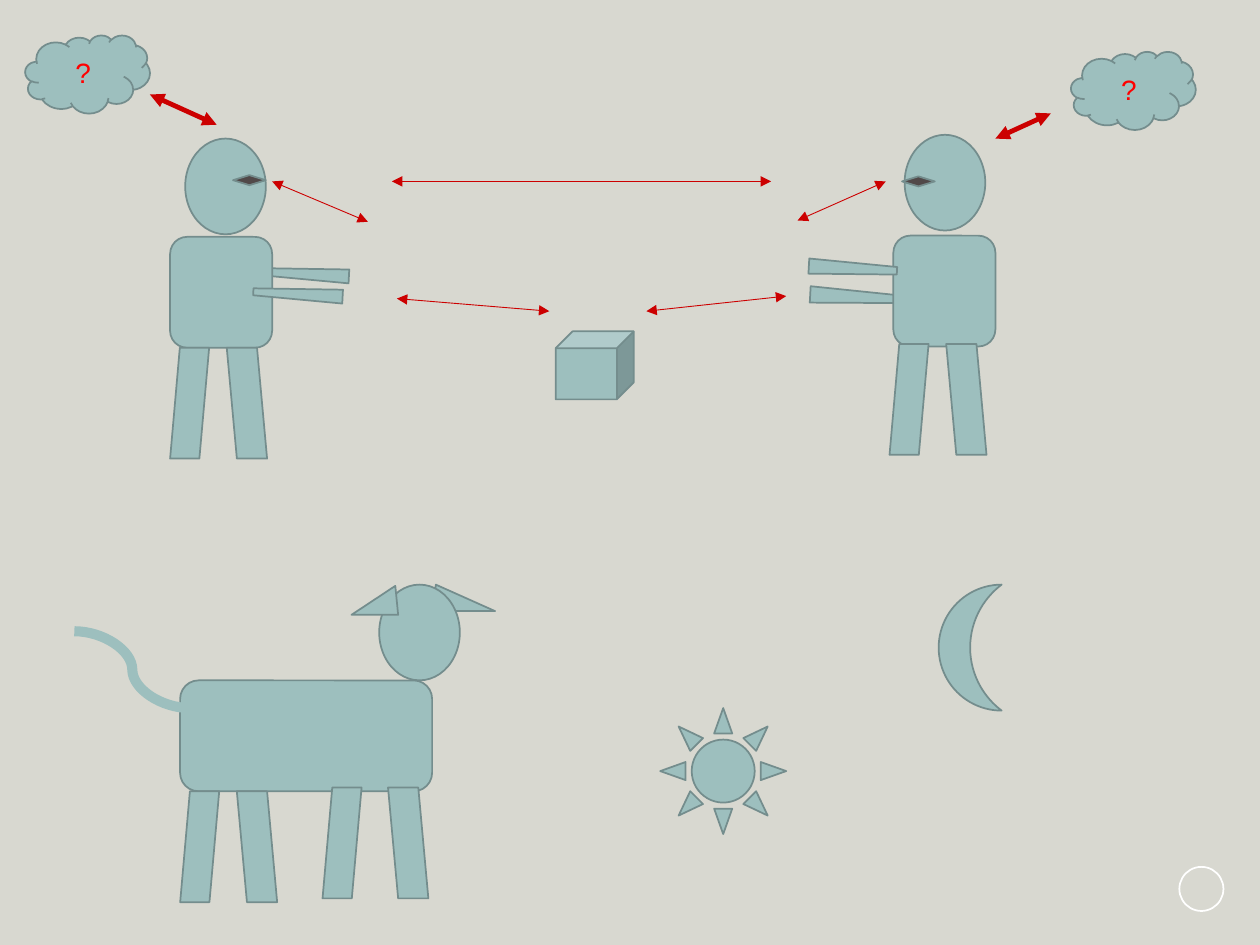
from dataclasses import dataclass

import lxml.etree
import pptx
import pptx.dml.color
import pptx.enum.shapes
import pptx.enum.text
import pptx.oxml.ns
import pptx.util

Inches = pptx.util.Inches
Pt = pptx.util.Pt
RGBColor = pptx.dml.color.RGBColor
Preset = pptx.enum.shapes.MSO_SHAPE
Connector = pptx.enum.shapes.MSO_CONNECTOR
qn = pptx.oxml.ns.qn

BACKGROUND = RGBColor(0xD8, 0xD8, 0xD0)
TEAL = RGBColor(0x9D, 0xBF, 0xBE)
OUTLINE = RGBColor(0x74, 0x8D, 0x8D)
EYE = RGBColor(0x51, 0x49, 0x49)
ARROW = RGBColor(0xCC, 0x00, 0x00)
QUESTION = RGBColor(0xFF, 0x00, 0x00)
WHITE = RGBColor(0xFF, 0xFF, 0xFF)

ARM_ANGLE = 273.1
EAR_APEX = 0.94


@dataclass(frozen=True)
class Part:
    preset: Preset
    left: float
    top: float
    width: float
    height: float
    flip: str = ""
    rotation: float = 0
    fill: RGBColor = TEAL
    apex: float | None = None


@dataclass(frozen=True)
class Arrow:
    start: tuple[float, float]
    end: tuple[float, float]
    weight: float = 0.5


def head(left: float, top: float) -> Part:
    return Part(Preset.OVAL, left, top, 0.64, 0.76)


def body(left: float, top: float, width: float = 0.81) -> Part:
    return Part(Preset.ROUNDED_RECTANGLE, left, top, width, 0.88)


def legs(left: float, top: float, stride: float = 0.45) -> list[Part]:
    return [
        Part(Preset.PARALLELOGRAM, left, top, 0.31, 0.88),
        Part(Preset.PARALLELOGRAM, left + stride, top, 0.32, 0.88, flip="h"),
    ]


def arm(left: float, top: float, width: float, height: float, flip: str = "") -> Part:
    return Part(Preset.TRAPEZOID, left, top, width, height, flip, ARM_ANGLE)


def eye(left: float, top: float) -> Part:
    return Part(Preset.DIAMOND, left, top, 0.26, 0.08, "hv", fill=EYE)


LEFT_PERSON = [
    arm(2.36, 1.82, 0.11, 0.71),
    head(1.47, 1.1),
    body(1.35, 1.88),
    *legs(1.35, 2.76),
    arm(2.31, 1.98, 0.11, 0.71),
    eye(1.85, 1.39),
]
RIGHT_PERSON = [
    arm(6.7, 2.02, 0.13, 0.67, "hv"),
    head(7.18, 1.07),
    body(7.09, 1.87),
    *legs(7.06, 2.73),
    eye(7.16, 1.4),
    arm(6.71, 1.78, 0.12, 0.7, "hv"),
]
ANIMAL = [
    Part(Preset.ISOSCELES_TRIANGLE, 3.43, 4.64, 0.5, 0.21, "h", apex=EAR_APEX),
    head(3.01, 4.64),
    body(1.43, 5.4, 2),
    *legs(1.43, 6.28),
    *legs(2.56, 6.25, 0.52),
    Part(Preset.ISOSCELES_TRIANGLE, 2.79, 4.65, 0.37, 0.23, apex=EAR_APEX),
]
THINGS = [
    Part(Preset.CUBE, 4.41, 2.63, 0.62, 0.54),
    Part(Preset.SUN, 5.24, 5.62, 1, 1),
    Part(Preset.MOON, 7.45, 4.64, 0.5, 1),
]
THOUGHTS = [
    Part(Preset.CLOUD, left, top, 0.99, 0.62) for left, top in [(0.2, 0.28), (8.5, 0.41)]
]
ARROWS = [
    Arrow((2.16, 1.44), (2.92, 1.76)),
    Arrow((6.33, 1.75), (7.03, 1.44)),
    Arrow((3.11, 1.44), (6.12, 1.44)),
    Arrow((3.15, 2.37), (4.36, 2.47)),
    Arrow((5.13, 2.47), (6.24, 2.35)),
    Arrow((8.34, 0.9), (7.9, 1.1), 2.75),
    Arrow((1.72, 0.99), (1.19, 0.75), 2.75),
]


def draw_part(slide, part: Part):
    box = map(Inches, (part.left, part.top, part.width, part.height))
    shape = slide.shapes.add_shape(part.preset, *box)
    shape.shadow.inherit = False
    shape.rotation = part.rotation
    shape.fill.solid()
    shape.fill.fore_color.rgb = part.fill
    shape.line.color.rgb = OUTLINE
    shape.line.width = Pt(1)
    if part.apex is not None:
        shape.adjustments[0] = part.apex
    for axis in part.flip:
        shape.element.spPr.find(qn("a:xfrm")).set(f"flip{axis.upper()}", "1")
    return shape


def draw_thought(slide, part: Part) -> None:
    frame = draw_part(slide, part).text_frame
    frame.vertical_anchor = pptx.enum.text.MSO_ANCHOR.MIDDLE
    question = frame.paragraphs[0]
    question.text = "?"
    question.alignment = pptx.enum.text.PP_ALIGN.CENTER
    question.font.name = "Arial"
    question.font.size = Pt(16)
    question.font.color.rgb = QUESTION


def draw_connector(slide, kind: Connector, route: Arrow, color: RGBColor):
    ends = map(Inches, (*route.start, *route.end))
    connector = slide.shapes.add_connector(kind, *ends)
    connector.line.color.rgb = color
    connector.line.width = Pt(route.weight)
    lxml.etree.SubElement(connector.element.spPr, qn("a:effectLst"))
    return connector


def draw_arrow(slide, arrow: Arrow) -> None:
    connector = draw_connector(slide, Connector.STRAIGHT, arrow, ARROW)
    outline = connector.element.spPr.find(qn("a:ln"))
    for tag in ("a:headEnd", "a:tailEnd"):
        lxml.etree.SubElement(outline, qn(tag), type="triangle")


def main() -> None:
    deck = pptx.Presentation()
    deck.slide_width, deck.slide_height = Inches(10), Inches(7.5)
    slide = deck.slides.add_slide(deck.slide_layouts[6])
    slide.background.fill.solid()
    slide.background.fill.fore_color.rgb = BACKGROUND

    page_ring = draw_part(slide, Part(Preset.OVAL, 9.36, 6.88, 0.35, 0.35))
    page_ring.fill.background()
    page_ring.line.color.rgb = WHITE

    for part in LEFT_PERSON + RIGHT_PERSON + ANIMAL + THINGS:
        draw_part(slide, part)
    for thought in THOUGHTS:
        draw_thought(slide, thought)
    for arrow in ARROWS:
        draw_arrow(slide, arrow)
    tail = Arrow((0.59, 5.01), (1.51, 5.62), 5.75)
    draw_connector(slide, Connector.CURVE, tail, TEAL)

    deck.save("out.pptx")


if __name__ == "__main__":
    main()
